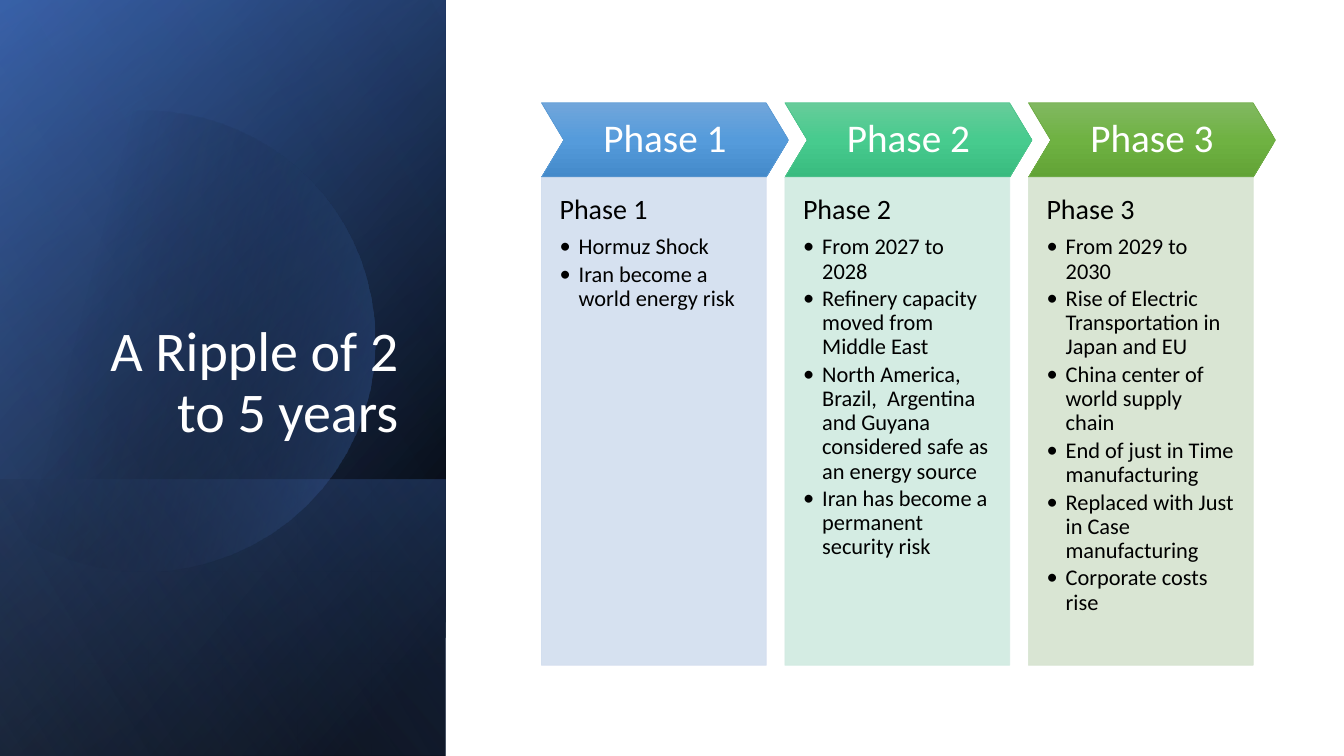
import dataclasses
import typing

import lxml.etree
import pptx
import pptx.dml.color
import pptx.enum.shapes
import pptx.enum.text
import pptx.oxml.ns
import pptx.util

Inches = pptx.util.Inches
Pt = pptx.util.Pt
qn = pptx.oxml.ns.qn
Kind = pptx.enum.shapes.MSO_SHAPE
Align = pptx.enum.text.PP_ALIGN
Anchor = pptx.enum.text.MSO_ANCHOR

COLORS = {
    "black": "000000", "white": "FFFFFF", "navy": "2F5597",
    "blue": "4472C4", "pale": "8FAADC",
}
FONT = "Calibri"
LEFT, TOP, STEP = 5.37, 1.02, 4.83 / 2
HEAD_W, HEAD_H, BODY_W, BODY_H = 2.45, 0.74, 2.23, 4.84


class Stop(typing.NamedTuple):
    """A gradient stop with its place and opacity in percent."""
    place: float
    color: str
    alpha: float = 100


@dataclasses.dataclass
class Layer:
    """A turned and mirrored rectangle of the backdrop."""
    box: tuple[float, float, float, float]
    stops: list[Stop]
    angle: float


@dataclasses.dataclass
class Phase:
    """A chevron and the panel below it."""
    name: str
    shades: tuple[str, str, str]
    edge: str
    panel: str
    points: list[str]


FULL = (-1.54, 1.54, 7.5, 4.42)
UNDER = [
    Layer(FULL, [Stop(8, COLORS["black"]), Stop(100, COLORS["navy"])], 50),
    Layer(FULL, [Stop(0, COLORS["black"], 0), Stop(99, COLORS["blue"], 46)], 30),
    Layer((0.84, 3.92, 2.74, 4.42),
          [Stop(2, COLORS["blue"], 29), Stop(100, COLORS["black"], 30)], 130),
]
OVER = Layer(FULL, [Stop(0, COLORS["black"], 0), Stop(99, COLORS["pale"], 11)], 120)
DISC = [Stop(29, COLORS["black"], 0), Stop(100, COLORS["blue"], 43)]
START = (1.49, 1.1)
CURVES = [
    ((2.46, 1.12), (3.35, 1.77), (3.63, 2.75)),
    ((3.98, 3.97), (3.28, 5.23), (2.07, 5.58)),
    ((1.31, 5.8), (0.53, 5.61), (-0.03, 5.14)),
    ((-0.15, 5.03), (-0.15, 5.03), (-0.15, 5.03)),
    ((-0.15, 1.75), (-0.15, 1.75), (-0.15, 1.75)),
    ((0, 1.61), (0, 1.61), (0, 1.61)),
    ((0.23, 1.42), (0.5, 1.28), (0.8, 1.19)),
    ((1.03, 1.13), (1.26, 1.1), START),
]
PHASES = [
    Phase("Phase 1", ("71A6DB", "559BDB", "448ACA"), "5B9BD5", "D2DEEF",
          ["Hormuz Shock", "Iran become a world energy risk"]),
    Phase("Phase 2", ("67CC9A", "47CB8E", "39BB7F"), "4DC58D", "D0EAE1",
          ["From 2027 to 2028", "Refinery capacity moved from Middle East",
           "North America, Brazil,  Argentina and Guyana considered safe as an energy source",
           "Iran has become a permanent security risk"]),
    Phase("Phase 3", ("81B861", "6FB242", "62A336"), "70AD47", "D5E3CF",
          ["From 2029 to 2030", "Rise of Electric Transportation in Japan and EU",
           "China center of world supply chain", "End of just in Time manufacturing",
           "Replaced with Just in Case manufacturing", "Corporate costs rise"]),
]


def rgb(color: str) -> pptx.dml.color.RGBColor:
    """Turn a hex string into a colour."""
    return pptx.dml.color.RGBColor.from_string(color)


def fade(node, alpha: float) -> None:
    """Give a colour node its opacity."""
    lxml.etree.SubElement(node, qn("a:alpha"), val=str(int(alpha * 1000)))


def blend(shape, stops: list[Stop], angle: float) -> None:
    """Fill a shape with a linear gradient."""
    shape.fill.gradient()
    shape.fill.gradient_angle = 360 - angle
    rows = shape.element.spPr.find(".//" + qn("a:gsLst"))
    for old in list(rows):
        rows.remove(old)
    for stop in stops:
        row = lxml.etree.SubElement(rows, qn("a:gs"), pos=str(int(stop.place * 1000)))
        tone = lxml.etree.SubElement(row, qn("a:srgbClr"), val=stop.color)
        if stop.alpha < 100:
            fade(tone, stop.alpha)


def edge(shape, color: str) -> None:
    """Draw a thin outline."""
    shape.line.color.rgb = rgb(color)
    shape.line.width = Pt(0.5)


def place(slide, kind, box: tuple[float, float, float, float]):
    """Add a preset shape without a shadow."""
    shape = slide.shapes.add_shape(kind, *map(Inches, box))
    shape.shadow.inherit = False
    return shape


def layer(slide, item: Layer) -> None:
    """Add one rectangle of the backdrop."""
    shape = place(slide, Kind.RECTANGLE, item.box)
    shape.rotation = 90
    shape.element.spPr.get_or_add_xfrm().set("flipH", "1")
    shape.line.fill.background()
    blend(shape, item.stops, item.angle)


def disc(slide) -> None:
    """Add the cut circle, with its curves sampled as short lines."""
    pen, dots = START, []
    for one, two, end in CURVES:
        for t in (n / 16 for n in range(1, 17)):
            u = 1 - t
            dots.append(tuple(
                Inches(u**3 * a + 3 * u * u * t * b + 3 * u * t * t * c + t**3 * d)
                for a, b, c, d in zip(pen, one, two, end)))
        pen = end
    form = slide.shapes.build_freeform(*map(Inches, START))
    form.add_line_segments(dots)
    shape = form.convert_to_shape()
    shape.shadow.inherit = False
    shape.line.fill.background()
    blend(shape, DISC, 14)


def write(frame, text: str, *, size: float, color: str = COLORS["black"],
          align=Align.LEFT, gap: float = 0, dot: bool = False) -> None:
    """Add a paragraph to a text frame."""
    para = frame.add_paragraph() if frame.text else frame.paragraphs[0]
    para.alignment = align
    para.line_spacing = 0.9
    para.space_before = Pt(0)
    para.space_after = Pt(gap)
    if dot:
        para.level = 1
        props = para._p.get_or_add_pPr()
        props.set("marL", str(Inches(0.19)))
        props.set("indent", str(Inches(-0.19)))
        lxml.etree.SubElement(props, qn("a:buFont"), typeface=FONT)
        lxml.etree.SubElement(props, qn("a:buChar"), char="•")
    run = para.add_run()
    run.text = text
    run.font.name, run.font.size = FONT, Pt(size)
    run.font.color.rgb = rgb(color)


def setup(frame, anchor, pads: tuple[float, float, float, float]) -> None:
    """Set wrap, anchor and insets of a text frame."""
    frame.word_wrap = True
    frame.auto_size = pptx.enum.text.MSO_AUTO_SIZE.NONE
    frame.vertical_anchor = anchor
    (frame.margin_left, frame.margin_top,
     frame.margin_right, frame.margin_bottom) = map(Inches, pads)


def phase(slide, item: Phase, left: float) -> None:
    """Add a chevron and its panel."""
    head = place(slide, Kind.CHEVRON, (left, TOP, HEAD_W, HEAD_H))
    head.adjustments[0] = 0.3
    blend(head, [Stop(50 * n, tone) for n, tone in enumerate(item.shades)], 90)
    edge(head, item.edge)
    setup(head.text_frame, Anchor.MIDDLE, (0.09,) * 4)
    write(head.text_frame, item.name, size=28, color=COLORS["white"], align=Align.CENTER)

    body = place(slide, Kind.RECTANGLE, (left, TOP + HEAD_H, BODY_W, BODY_H))
    body.fill.solid()
    body.fill.fore_color.rgb = rgb(item.panel)
    edge(body, item.panel)
    for tone in body.element.spPr.iter(qn("a:srgbClr")):
        fade(tone, 90)
    setup(body.text_frame, Anchor.TOP, (0.18, 0.18, 0.18, 0.35))
    write(body.text_frame, item.name, size=20, gap=7)
    for point in item.points:
        write(body.text_frame, point, size=16, gap=2.4, dot=True)


def main() -> None:
    """Build and save the slide."""
    deck = pptx.Presentation()
    deck.slide_width, deck.slide_height = Inches(13.33), Inches(7.5)
    slide = deck.slides.add_slide(deck.slide_layouts[5])
    for item in UNDER:
        layer(slide, item)
    disc(slide)
    layer(slide, OVER)
    title = slide.shapes.title
    slide.shapes.element.append(title.element)
    title.left, title.top, title.width, title.height = map(Inches, (0.64, 1.84, 3.41, 2.62))
    setup(title.text_frame, Anchor.BOTTOM, (0.1, 0.05, 0.1, 0.05))
    write(title.text_frame, "A Ripple of 2 to 5 years", size=40,
          color=COLORS["white"], align=Align.RIGHT)
    for n, item in enumerate(PHASES):
        phase(slide, item, LEFT + n * STEP)
    deck.save("out.pptx")


if __name__ == "__main__":
    main()
